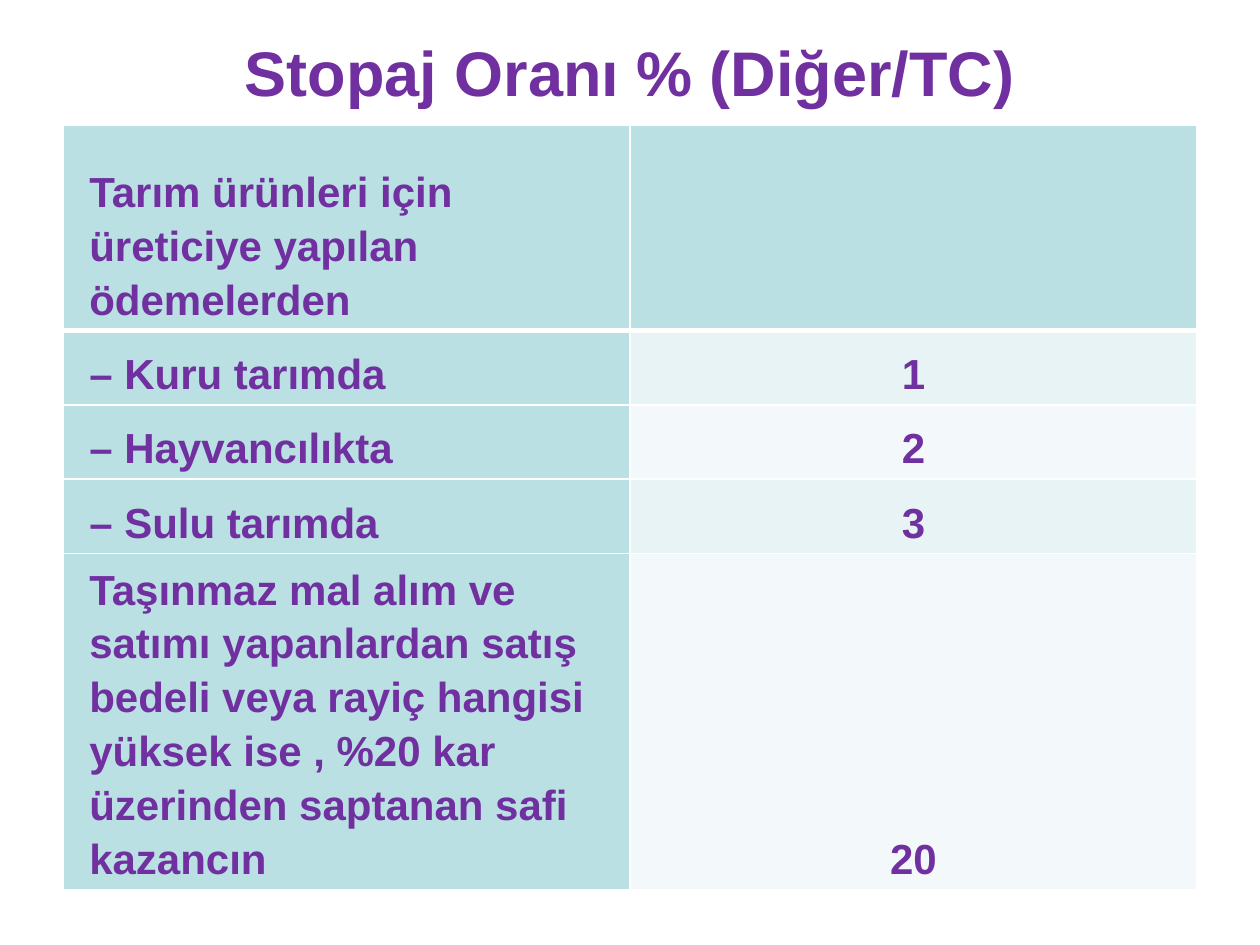
import pptx
import pptx.util
import pptx.dml.color
import pptx.enum.text
import lxml.etree

Cm, Pt = pptx.util.Cm, pptx.util.Pt
RGB = pptx.dml.color.RGBColor.from_string
ALIGN = pptx.enum.text.PP_ALIGN
ANCHOR = pptx.enum.text.MSO_ANCHOR

TITLE = "Stopaj Oranı % (Diğer/TC)"
ROWS = [
    ("Tarım ürünleri için üreticiye yapılan ödemelerden", "", 4.14),
    ("– Kuru tarımda", "1", 1.5),
    ("– Hayvancılıkta", "2", 1.5),
    ("– Sulu tarımda", "3", 1.5),
    ("Taşınmaz mal alım ve satımı yapanlardan satış bedeli veya rayiç "
     "hangisi yüksek ise , %20 kar üzerinden saptanan safi kazancın", "20", 6.75),
]
THEME = {
    "font": "Arial", "ink": "7030A0", "line": "FFFFFF", "head": "BBE0E3",
    "bands": ("F3F9FA", "E7F3F4"), "title": 36, "body": 24,
}
LEFT, WIDTH = Cm(1.27), Cm(22.86)
CELL = {
    "margin_left": Cm(0.53), "margin_right": Cm(0.53),
    "margin_top": Cm(0.13), "margin_bottom": Cm(0.13),
    "vertical_anchor": ANCHOR.BOTTOM,
}


def put(item, values):
    for key, value in values.items():
        setattr(item, key, value)


def write(frame, text, size, align, space):
    para = frame.paragraphs[0]
    para.text = text
    put(para, {"alignment": align, "line_spacing": space})
    put(para.font, {"name": THEME["font"], "size": Pt(size), "bold": True})
    para.font.color.rgb = RGB(THEME["ink"])


def edge(cell, side, width):
    tag = pptx.oxml.ns.qn
    line = lxml.etree.Element(tag("a:ln" + side), w=str(Pt(width)))
    fill = lxml.etree.SubElement(line, tag("a:solidFill"))
    lxml.etree.SubElement(fill, tag("a:srgbClr"), val=THEME["line"])
    return line


def frame_cell(cell, row):
    widths = {"L": 1, "R": 1, "T": 3 if row == 1 else 1, "B": 3 if row == 0 else 1}
    props = cell._tc.get_or_add_tcPr()
    for spot, (side, width) in enumerate(widths.items()):
        props.insert(spot, edge(cell, side, width))


def main():
    deck = pptx.Presentation()
    put(deck, {"slide_width": Cm(25.4), "slide_height": Cm(19.05)})
    slide = deck.slides.add_slide(deck.slide_layouts[5])

    title = slide.shapes.title
    put(title, {"left": LEFT, "top": Cm(0.76), "width": WIDTH, "height": Cm(1.37)})
    put(title.text_frame, {"word_wrap": True, "vertical_anchor": ANCHOR.MIDDLE})
    write(title.text_frame, TITLE, THEME["title"], ALIGN.CENTER, 1.0)

    high = Cm(sum(row[2] for row in ROWS))
    grid = slide.shapes.add_table(len(ROWS), 2, LEFT, Cm(2.52), WIDTH, high).table
    for r, (label, rate, tall) in enumerate(ROWS):
        grid.rows[r].height = Cm(tall)
        for c, text in enumerate((label, rate)):
            cell = grid.cell(r, c)
            put(cell, CELL)
            cell.fill.solid()
            plain = r == 0 or c == 0
            tint = THEME["head"] if plain else THEME["bands"][r % 2]
            cell.fill.fore_color.rgb = RGB(tint)
            write(cell.text_frame, text, THEME["body"],
                  ALIGN.CENTER if c else ALIGN.LEFT, 1.15)
            frame_cell(cell, r)
    deck.save("out.pptx")


if __name__ == "__main__":
    main()
